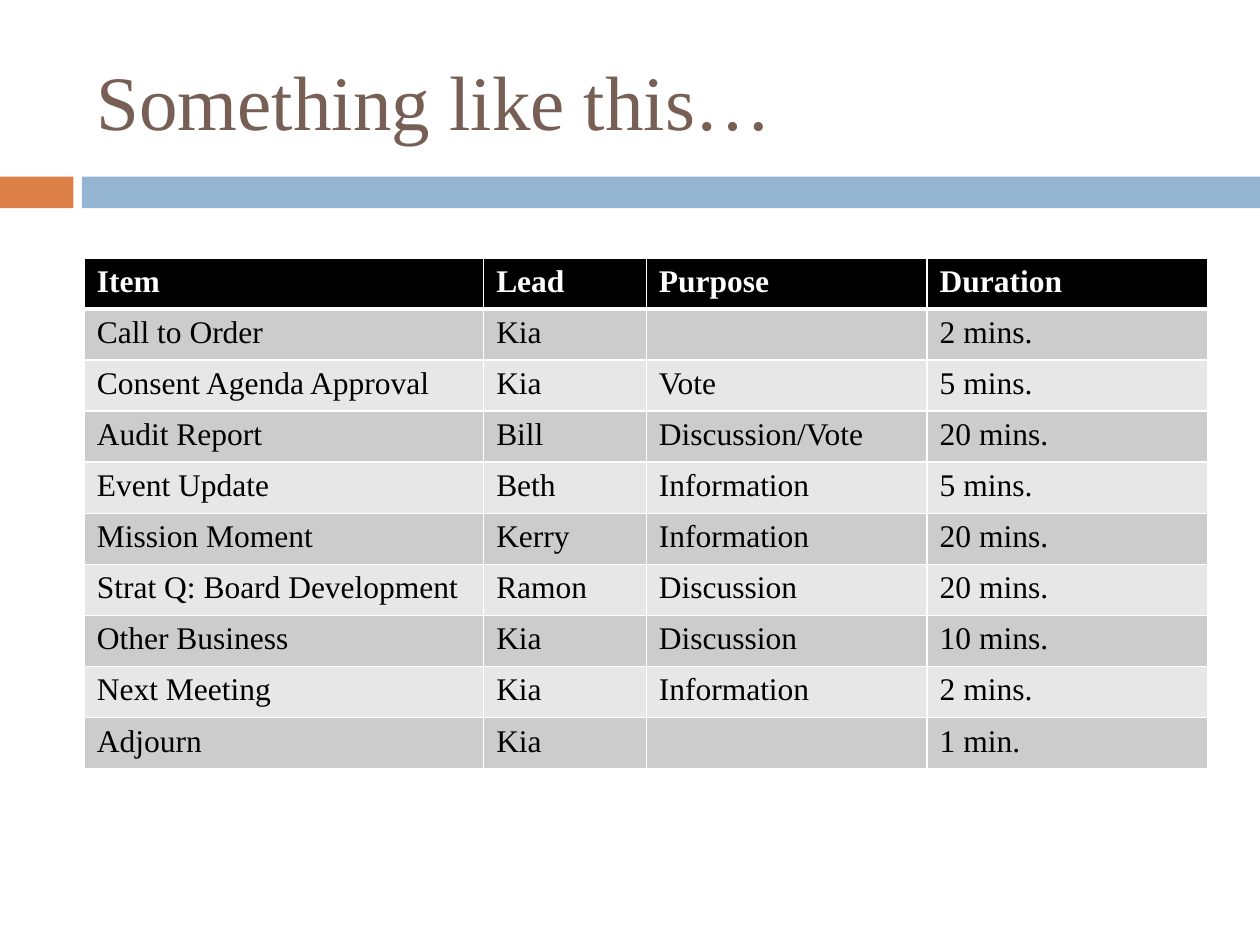
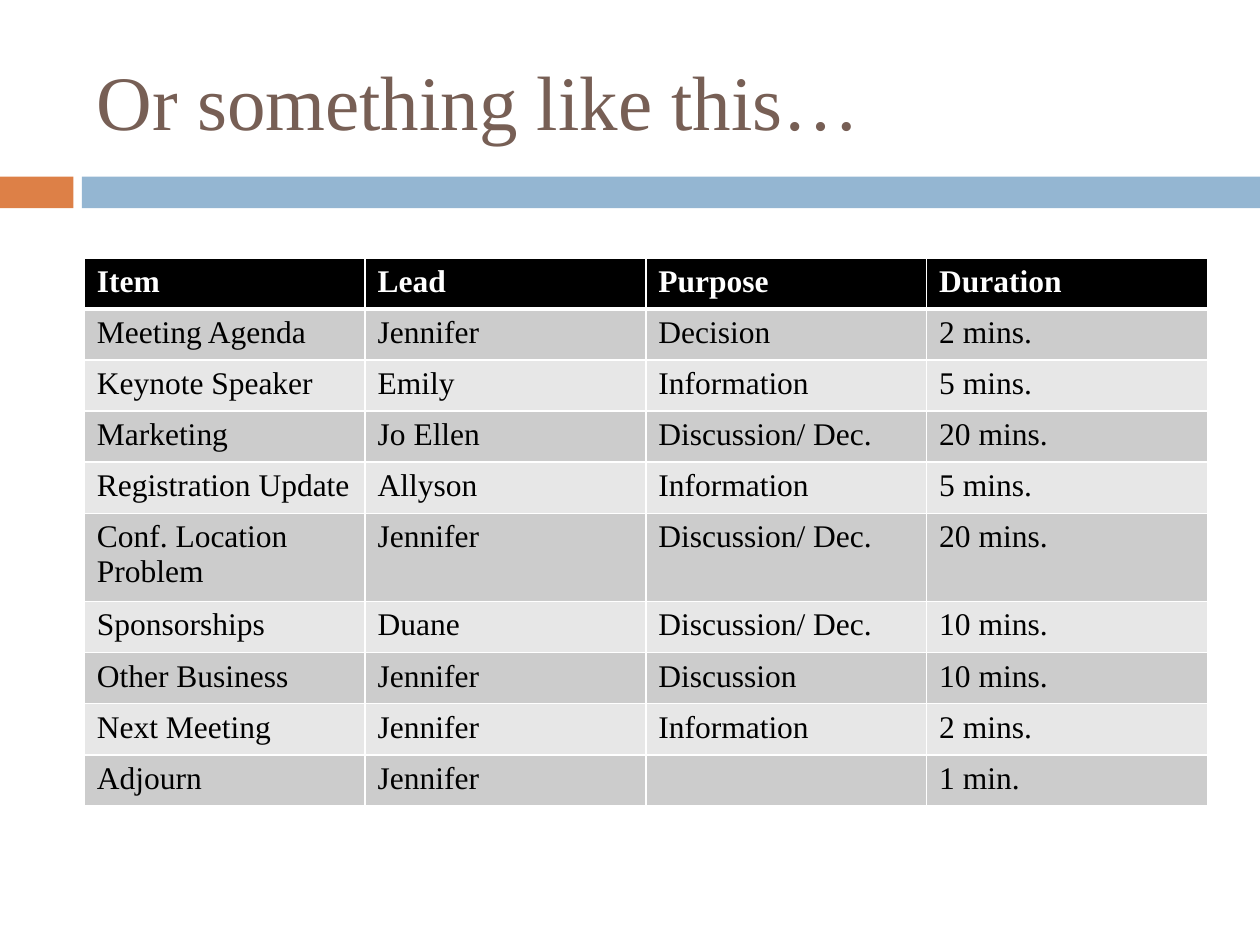
from dataclasses import dataclass

import pptx
import pptx.dml.color
import pptx.enum.shapes
import pptx.enum.text
import pptx.oxml
import pptx.oxml.ns
import pptx.util
from pptx.util import Cm


@dataclass(frozen=True)
class Theme:
    font: str = "Times New Roman"
    brown: str = "775F55"
    orange: str = "DD8047"
    blue: str = "94B6D2"
    black: str = "000000"
    white: str = "FFFFFF"
    dark: str = "CCCCCC"
    light: str = "E7E7E7"
    title: int = 44
    body: int = 18
    thin: int = 1
    thick: int = 3


THEME = Theme()
LEFT, WIDTH = Cm(1.7), Cm(22.66)
HEAD = ("Item", "Lead", "Purpose", "Duration")

BOARD = [
    ("Call to Order", "Kia", "", "2 mins."),
    ("Consent Agenda Approval", "Kia", "Vote", "5 mins."),
    ("Audit Report", "Bill", "Discussion/Vote", "20 mins."),
    ("Event Update", "Beth", "Information", "5 mins."),
    ("Mission Moment", "Kerry", "Information", "20 mins."),
    ("Strat Q: Board Development", "Ramon", "Discussion", "20 mins."),
    ("Other Business", "Kia", "Discussion", "10 mins."),
    ("Next Meeting", "Kia", "Information", "2 mins."),
    ("Adjourn", "Kia", "", "1 min."),
]

EVENT = [
    ("Meeting Agenda", "Jennifer", "Decision", "2 mins."),
    ("Keynote Speaker", "Emily", "Information", "5 mins."),
    ("Marketing", "Jo Ellen", "Discussion/ Dec.", "20 mins."),
    ("Registration Update", "Allyson", "Information", "5 mins."),
    ("Conf. Location Problem", "Jennifer", "Discussion/ Dec.", "20 mins."),
    ("Sponsorships", "Duane", "Discussion/ Dec.", "10 mins."),
    ("Other Business", "Jennifer", "Discussion", "10 mins."),
    ("Next Meeting", "Jennifer", "Information", "2 mins."),
    ("Adjourn", "Jennifer", "", "1 min."),
]


def paint(fill, color):
    fill.solid()
    fill.fore_color.rgb = pptx.dml.color.RGBColor.from_string(color)


def write(frame, text, size=THEME.body, color=THEME.black, bold=False):
    para = frame.paragraphs[0]
    if text:
        para.text = text
    for font in [para.font] + [run.font for run in para.runs]:
        font.name = THEME.font
        font.size = pptx.util.Pt(size)
        font.bold = bold
        font.color.rgb = pptx.dml.color.RGBColor.from_string(color)


def add_band(slide, left, width, color):
    band = slide.shapes.add_shape(
        pptx.enum.shapes.MSO_SHAPE.RECTANGLE, left, Cm(3.56), width, Cm(0.64))
    band.shadow.inherit = False
    band.line.fill.background()
    paint(band.fill, color)


def add_title(slide, text):
    box = slide.shapes.add_textbox(LEFT, Cm(0.64), WIDTH, Cm(2.74))
    frame = box.text_frame
    frame.word_wrap = True
    frame.vertical_anchor = pptx.enum.text.MSO_ANCHOR.MIDDLE
    write(frame, text, size=THEME.title, color=THEME.brown)


def add_edges(cell, top, bottom):
    """Draw white borders; top and bottom are widths in points."""
    props = cell._tc.get_or_add_tcPr()
    widths = {"L": THEME.thin, "R": THEME.thin, "T": top, "B": bottom}
    for side, width in widths.items():
        props.append(pptx.oxml.parse_xml(
            f'<a:ln{side} {pptx.oxml.ns.nsdecls("a")} w="{pptx.util.Pt(width)}">'
            f'<a:solidFill><a:srgbClr val="{THEME.white}"/></a:solidFill>'
            f'</a:ln{side}>'))


def add_agenda(slide, items, widths):
    rows = [HEAD] + items
    table = slide.shapes.add_table(
        len(rows), len(HEAD), LEFT, Cm(5.21), WIDTH, Cm(10.23)).table
    for col, width in zip(table.columns, widths):
        col.width = Cm(width)
    for num, texts in enumerate(rows):
        head = num == 0
        table.rows[num].height = Cm(0.96 if head else 1.03)
        shade = THEME.black if head else (THEME.light, THEME.dark)[num % 2]
        top = THEME.thick if num == 1 else THEME.thin
        bottom = THEME.thick if head else THEME.thin
        for cell, text in zip(table.rows[num].cells, texts):
            add_edges(cell, top, bottom)
            paint(cell.fill, shade)
            write(cell.text_frame, text, bold=head,
                  color=THEME.white if head else THEME.black)


def add_slide(deck, title, items, widths):
    slide = deck.slides.add_slide(deck.slide_layouts[6])
    add_band(slide, Cm(0), Cm(1.48), THEME.orange)
    add_band(slide, Cm(1.65), Cm(23.75), THEME.blue)
    add_title(slide, title)
    add_agenda(slide, items, widths)


def main():
    deck = pptx.Presentation()
    deck.slide_width, deck.slide_height = Cm(25.4), Cm(19.05)
    add_slide(deck, "Something like this…", BOARD, (8.05, 3.28, 5.66, 5.66))
    add_slide(deck, "Or something like this…", EVENT, [5.66] * len(HEAD))
    deck.save("out.pptx")


if __name__ == "__main__":
    main()
